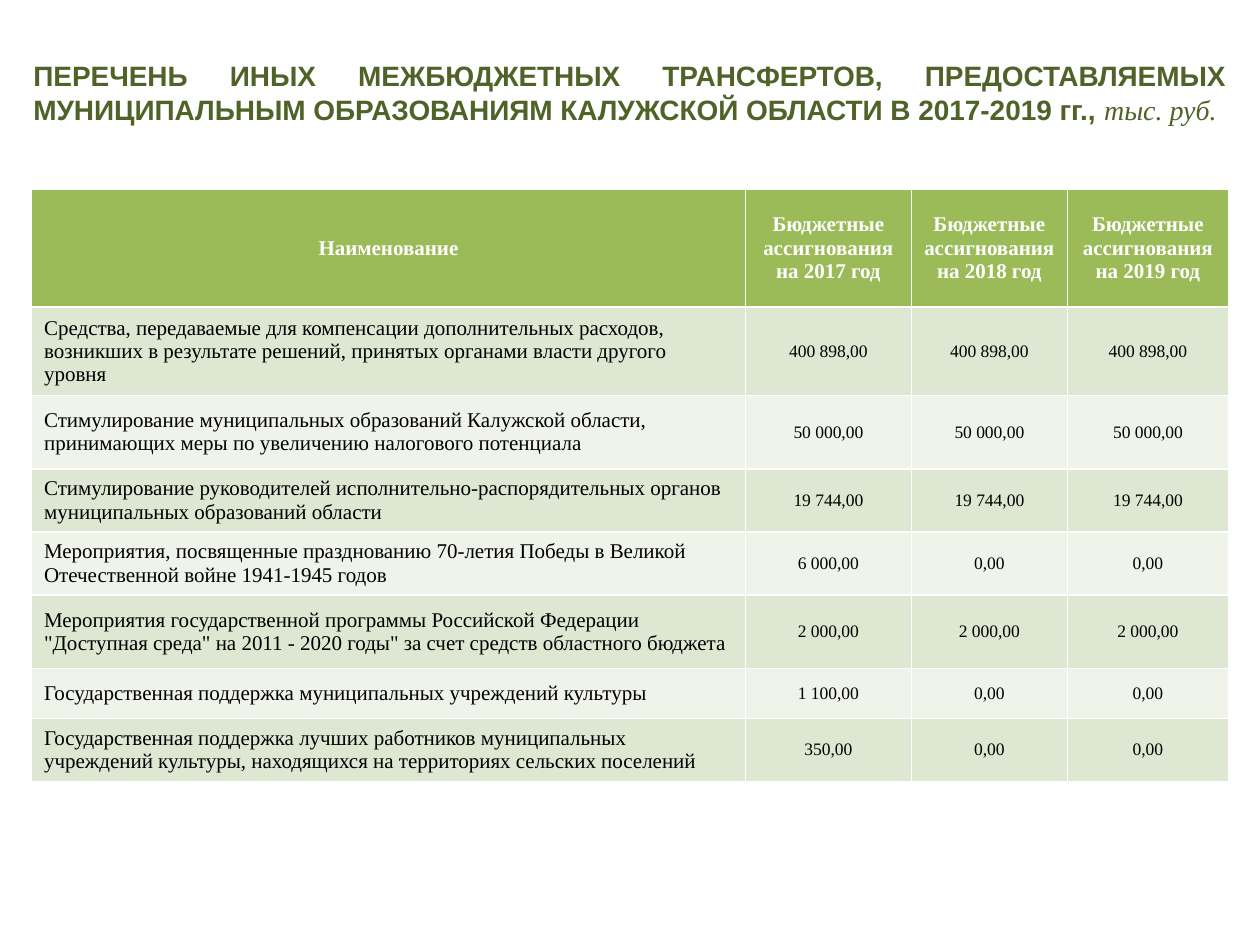
from lxml.etree import SubElement
from pptx import Presentation
from pptx.dml.color import RGBColor
from pptx.enum.text import MSO_ANCHOR as Anchor, PP_ALIGN as Align
from pptx.oxml.ns import qn
from pptx.util import Pt

SERIF = "Times New Roman"
WHITE, BLACK, GREEN, OLIVE = "FFFFFF", "000000", "9BBB59", "4F6228"
BANDS = ["DEE7D1", "EFF3EA"]

TITLE = ("ПЕРЕЧЕНЬ ИНЫХ МЕЖБЮДЖЕТНЫХ ТРАНСФЕРТОВ, ПРЕДОСТАВЛЯЕМЫХ "
         "МУНИЦИПАЛЬНЫМ ОБРАЗОВАНИЯМ КАЛУЖСКОЙ ОБЛАСТИ В 2017-2019 гг., ")
UNIT = "тыс. руб."
YEARS = [2017, 2018, 2019]
HEAD = ["Наименование"] + [f"Бюджетные ассигнования на {y} год" for y in YEARS]
ROWS = [
    ("Средства, передаваемые для компенсации дополнительных расходов, "
     "возникших в результате решений, принятых органами власти другого уровня",
     "400 898,00", "400 898,00", "400 898,00"),
    ("Стимулирование муниципальных образований Калужской области, "
     "принимающих меры по увеличению налогового потенциала",
     "50 000,00", "50 000,00", "50 000,00"),
    ("Стимулирование руководителей исполнительно-распорядительных органов "
     "муниципальных образований области",
     "19 744,00", "19 744,00", "19 744,00"),
    ("Мероприятия, посвященные празднованию 70-летия Победы в Великой "
     "Отечественной войне 1941-1945 годов",
     "6 000,00", "0,00", "0,00"),
    ("Мероприятия государственной программы Российской Федерации "
     "\"Доступная среда\" на 2011 - 2020 годы\" за счет средств областного бюджета",
     "2 000,00", "2 000,00", "2 000,00"),
    ("Государственная поддержка муниципальных учреждений культуры",
     "1 100,00", "0,00", "0,00"),
    ("Государственная поддержка лучших работников муниципальных "
     "учреждений культуры, находящихся на территориях сельских поселений",
     "350,00", "0,00", "0,00"),
]
WIDTHS = [408, 94.75, 89.25, 92]
HEIGHTS = [67.5, 50.5, 42, 36, 36, 42, 28.5, 36]


def paint(hue):
    return RGBColor.from_string(hue)


def write(para, text, size=12, face=SERIF, hue=BLACK, bold=False,
          slant=False, align=Align.LEFT):
    para.alignment = align
    run = para.add_run()
    run.text = text
    font = run.font
    font.size, font.name = Pt(size), face
    font.bold, font.italic = bold, slant
    font.color.rgb = paint(hue)


def frame(cell, hue=WHITE, width=1):
    props = cell._tc.get_or_add_tcPr()
    for pos, side in enumerate(("lnL", "lnR", "lnT", "lnB")):
        line = props.makeelement(qn("a:" + side), {"w": str(Pt(width))})
        fill = SubElement(line, qn("a:solidFill"))
        SubElement(fill, qn("a:srgbClr"), {"val": hue})
        props.insert(pos, line)


deck = Presentation()
deck.slide_width, deck.slide_height = Pt(720), Pt(540)
slide = deck.slides.add_slide(deck.slide_layouts[6])

box = slide.shapes.add_textbox(Pt(12), Pt(30), Pt(696), Pt(46)).text_frame
box.word_wrap = True
para = box.paragraphs[0]
write(para, TITLE, size=16, face="Arial", hue=OLIVE, bold=True, align=Align.JUSTIFY)
write(para, UNIT, size=16, hue=OLIVE, slant=True, align=Align.JUSTIFY)

table = slide.shapes.add_table(len(HEIGHTS), len(WIDTHS), Pt(18), Pt(108),
                               Pt(sum(WIDTHS)), Pt(sum(HEIGHTS))).table
for col, width in zip(table.columns, WIDTHS):
    col.width = Pt(width)
for row, height in zip(table.rows, HEIGHTS):
    row.height = Pt(height)

for r, row in enumerate([HEAD] + ROWS):
    for c, text in enumerate(row):
        cell = table.cell(r, c)
        cell.vertical_anchor = Anchor.MIDDLE
        cell.fill.solid()
        cell.fill.fore_color.rgb = paint(BANDS[(r - 1) % 2] if r else GREEN)
        frame(cell)
        para = cell.text_frame.paragraphs[0]
        if r == 0:
            write(para, text, hue=WHITE, bold=True, align=Align.CENTER)
        elif c == 0:
            write(para, text)
        else:
            write(para, text, size=10, align=Align.CENTER)

deck.save("out.pptx")
